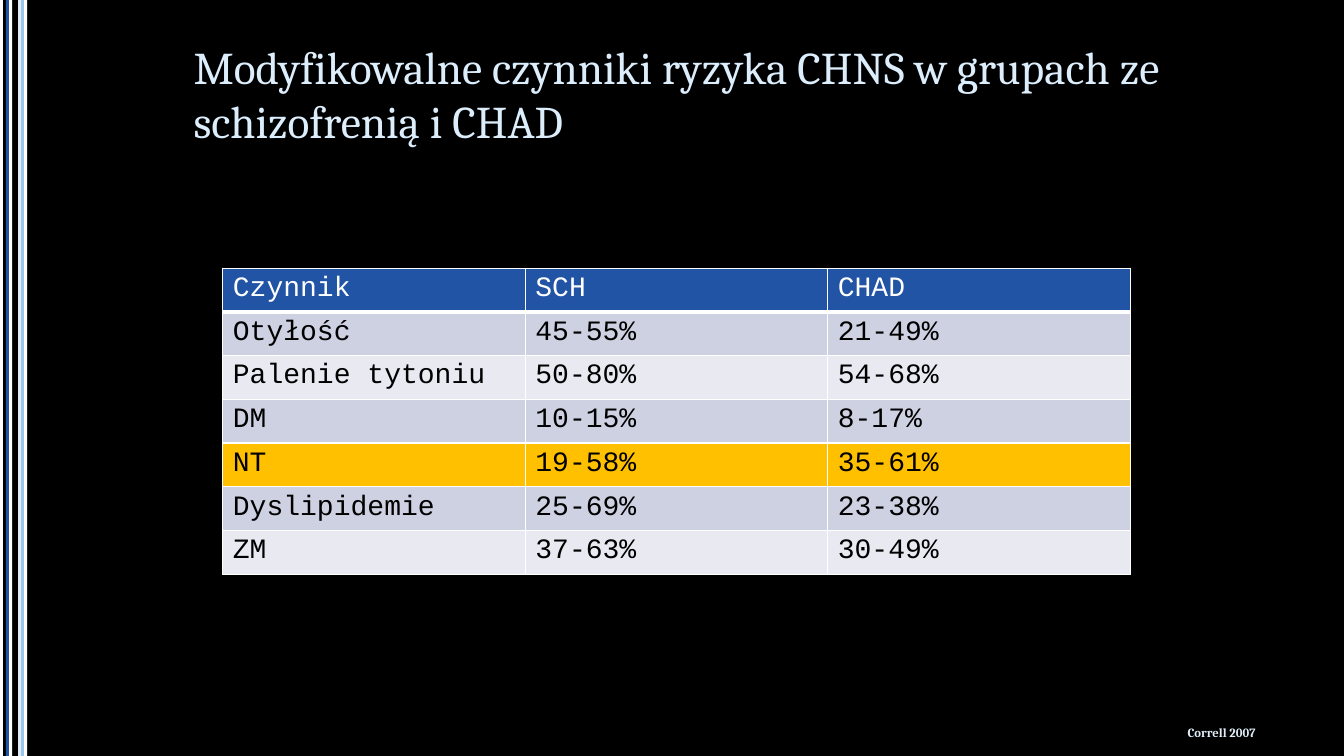
from dataclasses import dataclass

from lxml import etree
from pptx import Presentation
from pptx import util as u
from pptx.dml import color
from pptx.enum import shapes, text
from pptx.oxml import ns


@dataclass(frozen=True)
class Theme:
    background: str = "000000"
    white: str = "FFFFFF"
    black: str = "000000"
    blue: str = "2254A6"
    sky: str = "9FC6E9"
    ice: str = "E0EDF8"
    title: str = "DCEDFC"
    band_dark: str = "CDD1E1"
    band_light: str = "E8E9F1"
    highlight: str = "FFC000"
    heading_font: str = "Cambria"
    table_font: str = "Courier New"
    title_size: float = 32.4
    table_size: float = 20
    source_size: float = 9


@dataclass(frozen=True)
class Stripe:
    left: float
    width: float
    fill: str


@dataclass(frozen=True)
class Label:
    wording: str
    left: float
    top: float
    width: float
    height: float
    size: float
    ink: str
    inset: float = 0.1
    bold: bool = False
    align: text.PP_ALIGN = text.PP_ALIGN.LEFT


@dataclass(frozen=True)
class RiskRow:
    factor: str
    schizophrenia: str
    bipolar: str
    fill: str
    ink: str = "000000"


THEME = Theme()
SLIDE_HEIGHT = 7.5

STRIPES = [
    Stripe(0, 0.03, THEME.white),
    Stripe(0.09, 0.03, THEME.white),
    Stripe(0.15, 0.02, THEME.black),
    Stripe(0.18, 0.03, THEME.ice),
    Stripe(0.21, 0.03, THEME.sky),
    Stripe(0.24, 0.03, THEME.white),
    Stripe(0.06, 0.03, THEME.blue),
]
TITLE = Label("Modyfikowalne czynniki ryzyka CHNS w grupach ze schizofrenią i CHAD",
              1.72, 0.3, 10.93, 1.25, THEME.title_size, THEME.title, inset=0.2)
SOURCE = Label("Correll 2007", 8.33, 7.12, 4.22, 0.3, THEME.source_size, THEME.ice,
               bold=True, align=text.PP_ALIGN.RIGHT)
RISK_ROWS = [
    RiskRow("Czynnik", "SCH", "CHAD", THEME.blue, THEME.white),
    RiskRow("Otyłość", "45-55%", "21-49%", THEME.band_dark),
    RiskRow("Palenie tytoniu", "50-80%", "54-68%", THEME.band_light),
    RiskRow("DM", "10-15%", "8-17%", THEME.band_dark),
    RiskRow("NT", "19-58%", "35-61%", THEME.highlight),
    RiskRow("Dyslipidemie", "25-69%", "23-38%", THEME.band_dark),
    RiskRow("ZM", "37-63%", "30-49%", THEME.band_light),
]


def rgb(value: str) -> color.RGBColor:
    return color.RGBColor.from_string(value)


def format_font(font, name: str, size: float, ink: str, bold: bool = False) -> None:
    font.name = name
    font.size = u.Pt(size)
    font.bold = bold
    font.color.rgb = rgb(ink)


def draw_stripe(page, stripe: Stripe) -> None:
    bar = page.shapes.add_shape(
        shapes.MSO_SHAPE.RECTANGLE, u.Inches(stripe.left), 0,
        u.Inches(stripe.width), u.Inches(SLIDE_HEIGHT))
    bar.shadow.inherit = False
    bar.fill.solid()
    bar.fill.fore_color.rgb = rgb(stripe.fill)
    bar.line.fill.background()


def draw_label(page, label: Label) -> None:
    box = page.shapes.add_textbox(
        u.Inches(label.left), u.Inches(label.top),
        u.Inches(label.width), u.Inches(label.height))
    frame = box.text_frame
    frame.word_wrap = True
    frame.vertical_anchor = text.MSO_ANCHOR.MIDDLE
    frame.margin_left = frame.margin_right = u.Inches(label.inset)
    frame.margin_top = frame.margin_bottom = u.Inches(label.inset / 2)
    frame.text = label.wording
    para = frame.paragraphs[0]
    para.alignment = label.align
    format_font(para.runs[0].font, THEME.heading_font, label.size, label.ink, label.bold)


def add_borders(cell, bottom_width: float) -> None:
    properties = cell._tc.get_or_add_tcPr()
    widths = {"a:lnL": 1, "a:lnR": 1, "a:lnT": 1, "a:lnB": bottom_width}
    for side, width in widths.items():
        line = etree.SubElement(properties, ns.qn(side), w=str(u.Pt(width)))
        fill = etree.SubElement(line, ns.qn("a:solidFill"))
        etree.SubElement(fill, ns.qn("a:srgbClr"), val=THEME.white)


def draw_risk_table(page, rows: list[RiskRow]) -> None:
    row_height, column_width, columns = 0.41, 3, 3
    table = page.shapes.add_table(
        len(rows), columns, u.Inches(2.21), u.Inches(2.66),
        u.Inches(column_width * columns), u.Inches(row_height * len(rows))).table
    for row_index, row in enumerate(rows):
        table.rows[row_index].height = u.Inches(row_height)
        for column, wording in enumerate((row.factor, row.schizophrenia, row.bipolar)):
            cell = table.cell(row_index, column)
            cell.text = wording
            span = cell.text_frame.paragraphs[0].runs[0]
            format_font(span.font, THEME.table_font, THEME.table_size, row.ink)
            # Borders come before the fill in the cell properties
            add_borders(cell, bottom_width=3 if row_index == 0 else 1)
            cell.fill.solid()
            cell.fill.fore_color.rgb = rgb(row.fill)


def main() -> None:
    deck = Presentation()
    deck.slide_width = u.Inches(13.33)
    deck.slide_height = u.Inches(SLIDE_HEIGHT)
    page = deck.slides.add_slide(deck.slide_layouts[6])
    page.background.fill.solid()
    page.background.fill.fore_color.rgb = rgb(THEME.background)

    # Stripes along the left edge
    for stripe in STRIPES:
        draw_stripe(page, stripe)

    # Title, risk factors and source
    draw_label(page, TITLE)
    draw_risk_table(page, RISK_ROWS)
    draw_label(page, SOURCE)

    deck.save("out.pptx")


if __name__ == "__main__":
    main()
